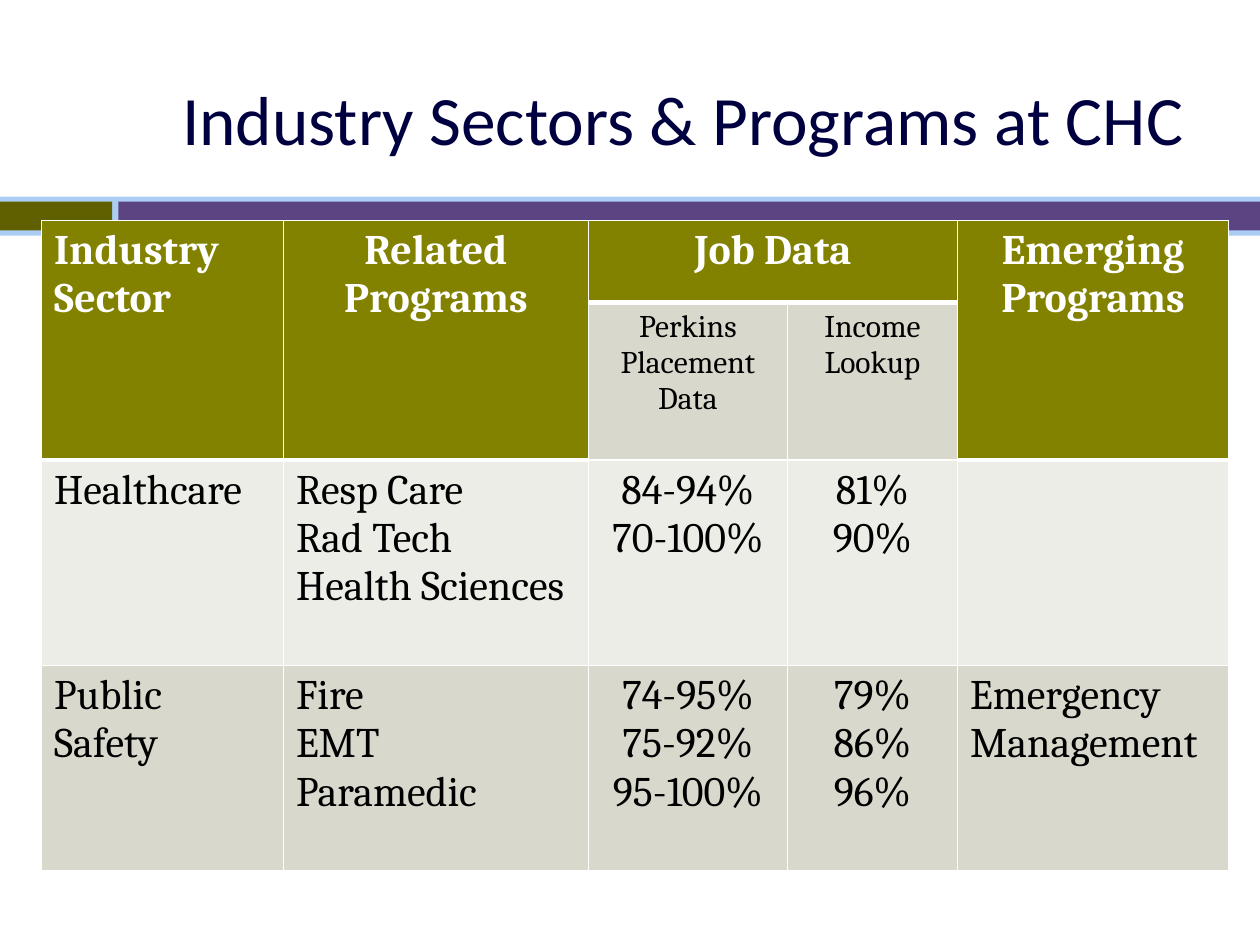
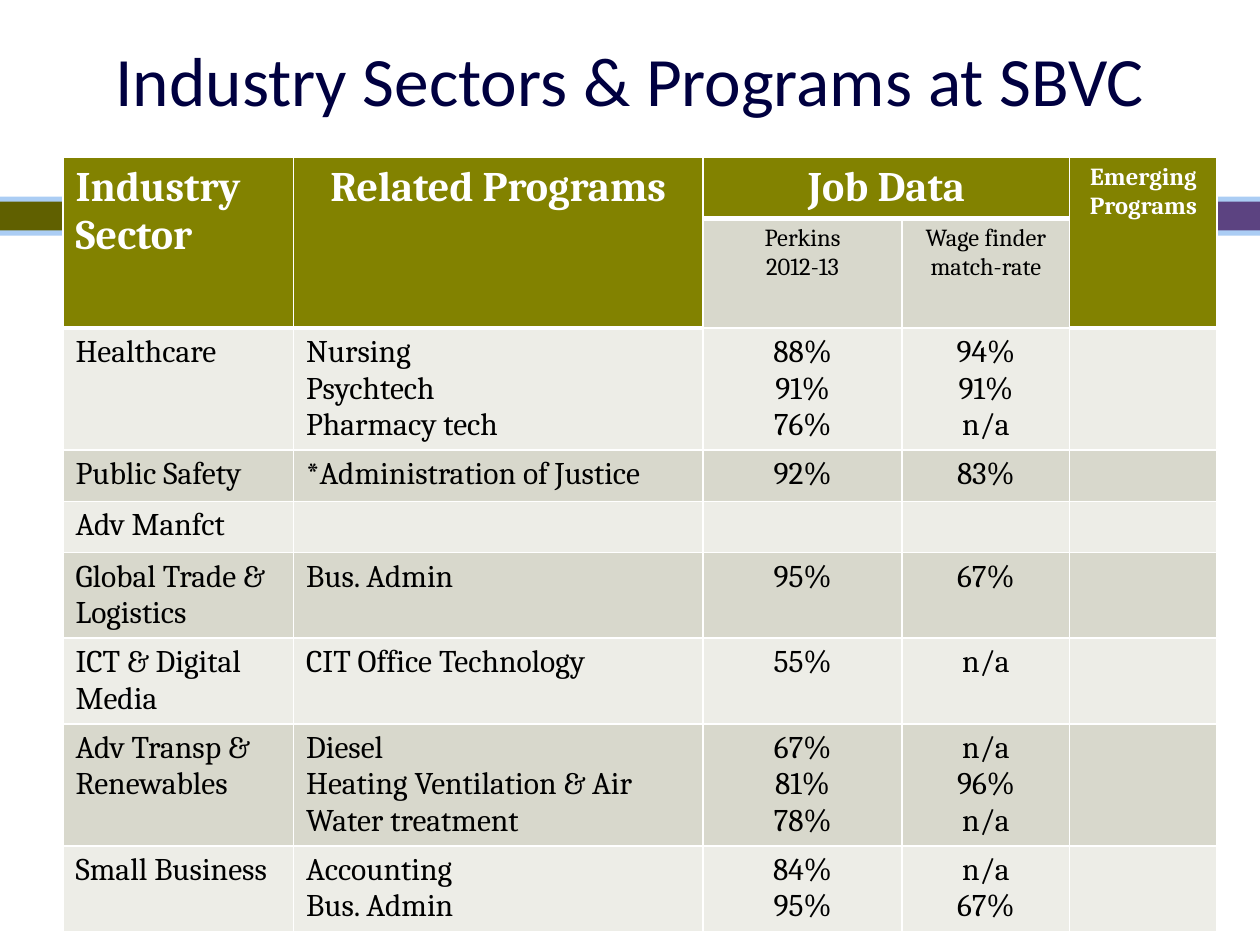
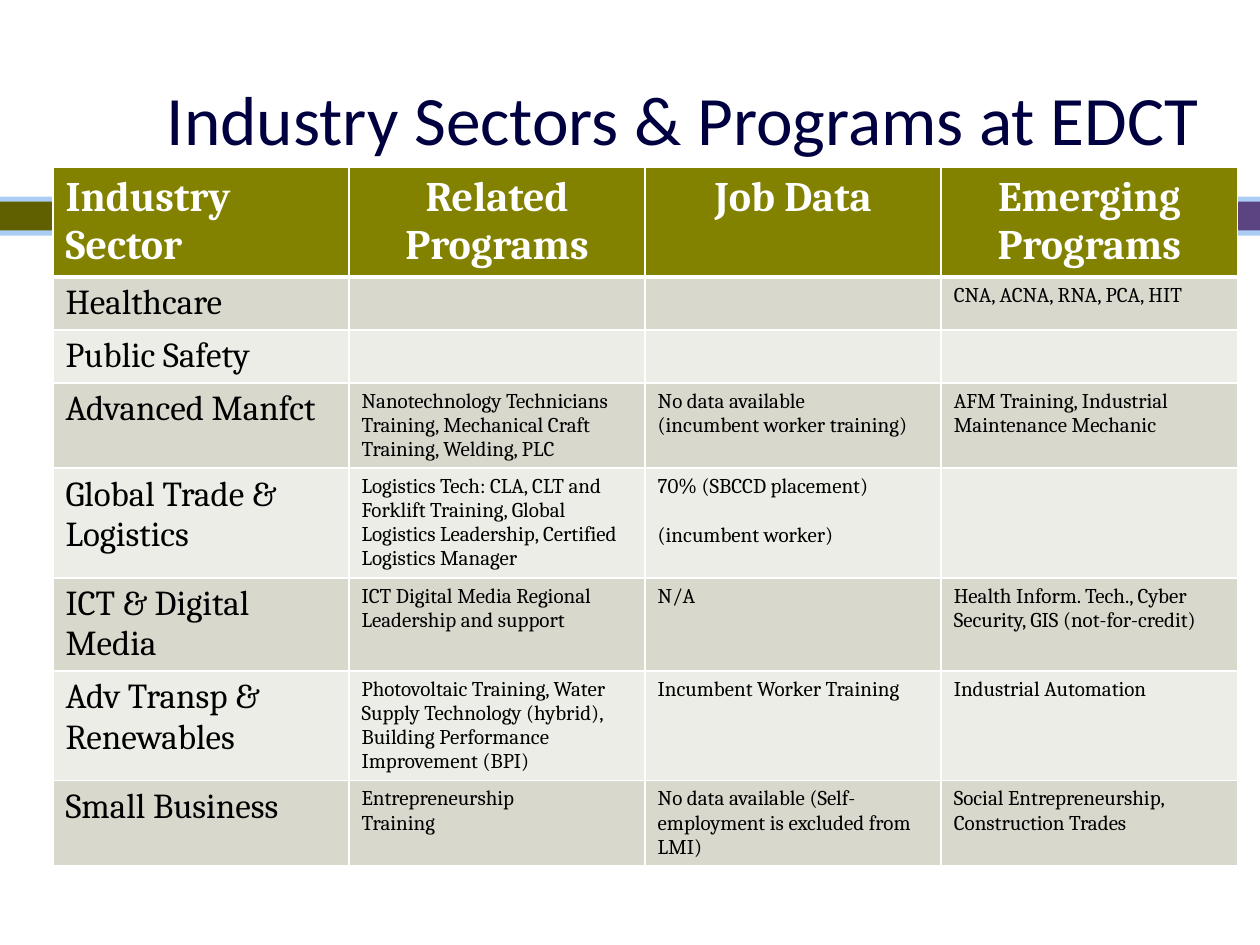
from dataclasses import dataclass

from lxml import etree
from pptx import Presentation
from pptx.dml.color import RGBColor
from pptx.enum.shapes import MSO_SHAPE
from pptx.enum.text import MSO_ANCHOR, MSO_AUTO_SIZE, PP_ALIGN
from pptx.oxml.ns import qn
from pptx.util import Inches, Pt

RECT = MSO_SHAPE.RECTANGLE
MIDDLE = MSO_ANCHOR.MIDDLE
NO_FIT = MSO_AUTO_SIZE.NONE
LEFT, CENTER = PP_ALIGN.LEFT, PP_ALIGN.CENTER
TITLE_ONLY = 5


@dataclass(frozen=True)
class Theme:
    title_font: str = "Calibri"
    table_font: str = "Cambria"
    title_size: float = 39.6
    head_size: float = 24
    gap: float = 14
    title: str = "000040"
    sky: str = "ABCDF4"
    moss: str = "606000"
    purple: str = "5C4381"
    olive: str = "828200"
    dark_row: str = "D8D8CC"
    light_row: str = "EDEDE7"
    white: str = "FFFFFF"
    black: str = "000000"
    rule: float = 1
    head_rule: float = 3


THEME = Theme()


@dataclass(frozen=True)
class Band:
    left: float
    top: float
    width: float
    height: float
    color: str


BANDS = (
    Band(0, 1.56, 10, 0.31, THEME.sky),
    Band(0, 1.6, 0.89, 0.23, THEME.moss),
    Band(0.94, 1.6, 9.06, 0.23, THEME.purple),
)


@dataclass(frozen=True)
class ProgramSlide:
    college: str
    title_left: float
    title_top: float
    left: float
    top: float
    widths: tuple[float, ...]
    heights: tuple[float, ...]
    rows: tuple[tuple[str, ...], ...]
    sector_size: float
    detail_size: float
    emerging_size: float = THEME.head_size
    subhead_size: float = 0
    job_columns: tuple[int, ...] = ()

    def is_head(self, row: int, col: int) -> bool:
        split = bool(self.job_columns)
        return row == 0 or (split and row == 1 and col not in self.job_columns)

    def size(self, row: int, col: int) -> float:
        if self.is_head(row, col):
            return self.emerging_size if col == len(self.widths) - 1 else THEME.head_size
        if row == 1 and self.job_columns:
            return self.subhead_size
        return self.sector_size if col == 0 else self.detail_size

    def align(self, row: int, col: int) -> PP_ALIGN:
        centered = col in self.job_columns or (self.is_head(row, col) and col > 0)
        return CENTER if centered else LEFT


SPLIT_HEAD = ("Industry Sector", "Related Programs", "Job Data", "", "Emerging Programs")

SLIDES = (
    ProgramSlide(
        college="CHC",
        title_left=0.92, title_top=0.31, left=0.33, top=1.75,
        widths=(1.92, 2.42, 1.58, 1.35, 2.15),
        heights=(0.65, 1.25, 1.63, 1.63),
        sector_size=24, detail_size=24, subhead_size=18, job_columns=(2, 3),
        rows=(
            SPLIT_HEAD,
            ("", "", "Perkins Placement Data", "Income Lookup", ""),
            ("Healthcare", "Resp Care\nRad Tech\nHealth Sciences",
             "84-94% 70-100%", "81%\n90%", ""),
            ("Public Safety", "Fire\nEMT\nParamedic",
             "74-95%\n75-92%\n95-100%", "79%\n86%\n96%", "Emergency Management"),
        ),
    ),
    ProgramSlide(
        college="SBVC",
        title_left=0.5, title_top=0, left=0.5, top=1.25,
        widths=(1.83, 3.25, 1.58, 1.33, 1.17),
        heights=(0.48, 0.87, 0.97, 0.4, 0.4, 0.68, 0.68, 0.97, 0.68),
        sector_size=18, detail_size=18, emerging_size=14, subhead_size=14,
        job_columns=(2, 3),
        rows=(
            SPLIT_HEAD,
            ("", "", "Perkins\n2012-13", "Wage finder match-rate", ""),
            ("Healthcare", "Nursing\nPsychtech\nPharmacy tech",
             "88%\n91%\n76%", "94%\n91%\nn/a", ""),
            ("Public Safety", "*Administration of Justice", "92%", "83%", ""),
            ("Adv Manfct", "", "", "", ""),
            ("Global Trade & Logistics", "Bus. Admin", "95%", "67%", ""),
            ("ICT & Digital Media", "CIT Office Technology", "55%", "n/a", ""),
            ("Adv Transp & Renewables",
             "Diesel\nHeating Ventilation & Air\nWater treatment",
             "67%\n81%\n78%", "n/a\n96%\nn/a", ""),
            ("Small Business", "Accounting\nBus. Admin", "84%\n95%", "n/a\n67%", ""),
        ),
    ),
    ProgramSlide(
        college="EDCT",
        title_left=0.92, title_top=0.31, left=0.42, top=1.33,
        widths=(2.35,) * 4,
        heights=(0.87, 0.42, 0.42, 0.67, 0.87, 0.74, 0.87, 0.67),
        sector_size=20, detail_size=12,
        rows=(
            ("Industry Sector", "Related Programs", "Job Data", "Emerging Programs"),
            ("Healthcare", "", "", "CNA, ACNA, RNA, PCA, HIT"),
            ("Public Safety", "", "", ""),
            ("Advanced Manfct",
             "Nanotechnology Technicians Training, Mechanical Craft Training, Welding, PLC",
             "No data available\n(incumbent worker training)",
             "AFM Training, Industrial Maintenance Mechanic"),
            ("Global Trade & Logistics",
             "Logistics Tech: CLA, CLT and Forklift Training, Global Logistics "
             "Leadership, Certified Logistics Manager",
             "70% (SBCCD placement)\n\n(incumbent worker)", ""),
            ("ICT & Digital Media", "ICT Digital Media Regional Leadership and support",
             "N/A", "Health Inform. Tech., Cyber Security, GIS (not-for-credit)"),
            ("Adv Transp & Renewables",
             "Photovoltaic Training, Water Supply Technology (hybrid), Building "
             "Performance Improvement (BPI)",
             "Incumbent Worker Training", "Industrial Automation"),
            ("Small Business", "Entrepreneurship\nTraining",
             "No data available (Self-employment is excluded from LMI)",
             "Social Entrepreneurship,\nConstruction Trades"),
        ),
    ),
)


def rgb(color: str) -> RGBColor:
    return RGBColor.from_string(color)


def add_band(slide, band: Band) -> None:
    sp = slide.shapes.add_shape(
        RECT, Inches(band.left), Inches(band.top), Inches(band.width), Inches(band.height)
    )
    sp.shadow.inherit = False
    sp.fill.solid()
    sp.fill.fore_color.rgb = rgb(band.color)
    sp.line.fill.background()


def format_title(slide, content: ProgramSlide) -> None:
    sp = slide.shapes.title
    sp.left, sp.top = Inches(content.title_left), Inches(content.title_top)
    sp.width, sp.height = Inches(9), Inches(1.25)
    tf = sp.text_frame
    tf.text = f"Industry Sectors & Programs at {content.college}"
    tf.auto_size = NO_FIT
    tf.vertical_anchor = MIDDLE
    p = tf.paragraphs[0]
    p.alignment = CENTER
    p.font.name = THEME.title_font
    p.font.size = Pt(THEME.title_size)
    p.font.color.rgb = rgb(THEME.title)


def set_border(cell, side: str, width: float) -> None:
    props = cell._tc.get_or_add_tcPr()
    line = etree.SubElement(props, qn(f"a:ln{side}"), w=str(Pt(width)))
    fill = etree.SubElement(line, qn("a:solidFill"))
    etree.SubElement(fill, qn("a:srgbClr"), val=THEME.white)


def write_cell(cell, text: str, size: float, align: PP_ALIGN, head: bool) -> None:
    tf = cell.text_frame
    p = tf.paragraphs[0]
    gap = False
    for i, line in enumerate(text.split("\n")):
        if not line:
            gap = True
            continue
        if i:
            p = tf.add_paragraph()
        p.text = line
        p.alignment = align
        if gap:
            p.space_before = Pt(THEME.gap)
            gap = False
        p.font.name = THEME.table_font
        p.font.size = Pt(size)
        p.font.bold = head
        p.font.color.rgb = rgb(THEME.white if head else THEME.black)


def style_cell(cell, row: int, head: bool) -> None:
    set_border(cell, "L", THEME.rule)
    set_border(cell, "R", THEME.rule)
    if row == 0:
        set_border(cell, "T", THEME.rule)
    set_border(cell, "B", THEME.head_rule if head else THEME.rule)
    band = THEME.dark_row if row % 2 else THEME.light_row
    cell.fill.solid()
    cell.fill.fore_color.rgb = rgb(THEME.olive if head else band)


def add_program_table(slide, content: ProgramSlide) -> None:
    table = slide.shapes.add_table(
        len(content.heights), len(content.widths),
        Inches(content.left), Inches(content.top),
        Inches(sum(content.widths)), Inches(sum(content.heights)),
    ).table
    table.first_row = table.horz_banding = False
    for column, width in zip(table.columns, content.widths):
        column.width = Inches(width)
    for table_row, height in zip(table.rows, content.heights):
        table_row.height = Inches(height)
    for r, texts in enumerate(content.rows):
        for c, text in enumerate(texts):
            cell = table.cell(r, c)
            head = content.is_head(r, c)
            style_cell(cell, r, head)
            write_cell(cell, text, content.size(r, c), content.align(r, c), head)
    if content.job_columns:
        first, last = content.job_columns
        table.cell(0, first).merge(table.cell(0, last))
        for c in range(len(content.widths)):
            if c not in content.job_columns:
                table.cell(0, c).merge(table.cell(1, c))


def main() -> None:
    prs = Presentation()
    prs.slide_width, prs.slide_height = Inches(10), Inches(7.5)
    for content in SLIDES:
        slide = prs.slides.add_slide(prs.slide_layouts[TITLE_ONLY])
        for band in BANDS:
            add_band(slide, band)
        format_title(slide, content)
        add_program_table(slide, content)
    prs.save("out.pptx")


if __name__ == "__main__":
    main()
